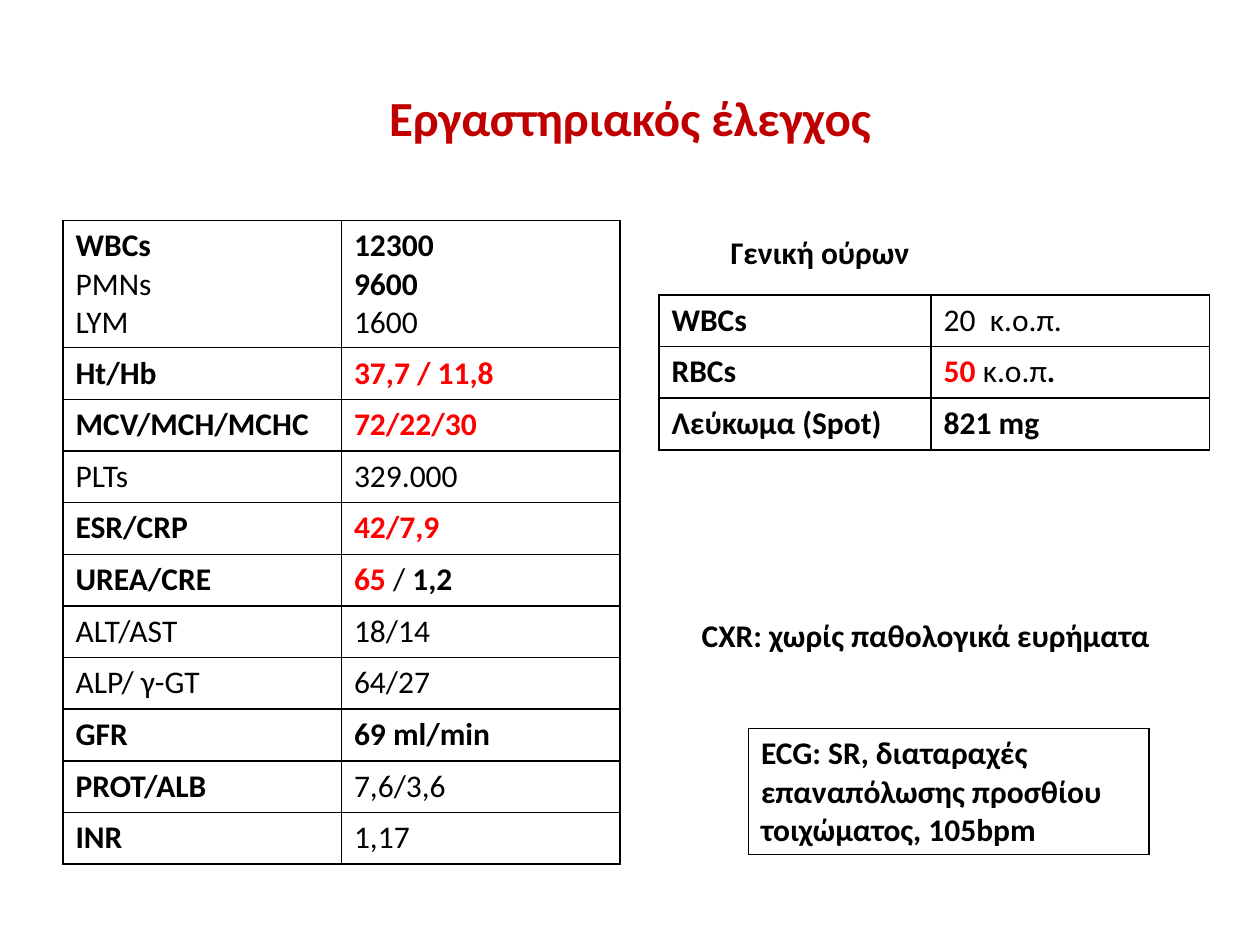
from lxml import etree
from pptx import Presentation
from pptx.dml.color import RGBColor
from pptx.enum.text import MSO_ANCHOR, PP_ALIGN
from pptx.oxml.ns import qn
from pptx.util import Inches, Pt

LEFT, CENTER = PP_ALIGN.LEFT, PP_ALIGN.CENTER
TOP, MIDDLE = MSO_ANCHOR.TOP, MSO_ANCHOR.MIDDLE
FONT = "Calibri"
BLACK, RED, DARK_RED = "000000", "FF0000", "C00000"
ROW, TALL = 0.41, 1.01

# In cell text, "|" parts runs, "*" starts a bold run, "!" a bold red one
BLOOD = [
    ("*WBCs\nPMNs\nLYM", "*12300\n*9600\n1600"),
    ("*Ht/Hb", "!37,7 / 11,8"),
    ("*MCV/MCH/MCHC", "!72/22/30"),
    ("PLTs", "329.000"),
    ("*ESR/CRP", "!42/7,9"),
    ("*UREA/CRE", "!65 |/ |*1,2"),
    ("ALT/AST", "18/14"),
    ("ALP/ γ-GT", "64/27"),
    ("*GFR", "*69 ml/min"),
    ("*PROT/ALB", "7,6/3,6"),
    ("*INR", "1,17"),
]
URINE = [
    ("*WBCs", "20  κ.ο.π."),
    ("*RBCs", "!50 |κ.ο.π|*."),
    ("*Λεύκωμα (Spot)", "*821 mg"),
]
ECG = [("*ECG: SR, διαταραχές επαναπόλωσης προσθίου τοιχώματος, 105bpm",)]


def paint(code):
    return RGBColor.from_string(code)


def write(frame, text, size=18, color=BLACK, align=LEFT):
    for i, line in enumerate(text.split("\n")):
        para = frame.paragraphs[0] if i == 0 else frame.add_paragraph()
        para.alignment = align
        for part in line.split("|"):
            run = para.add_run()
            run.text = part.lstrip("*!")
            font = run.font
            font.name, font.size = FONT, Pt(size)
            font.bold = part[0] in "*!"
            font.color.rgb = paint(RED if part[0] == "!" else color)


def add_text(slide, box, text, wrap=True, anchor=TOP, **style):
    frame = slide.shapes.add_textbox(*map(Inches, box)).text_frame
    frame.word_wrap = wrap
    frame.vertical_anchor = anchor
    write(frame, text, **style)


def frame_cell(cell):
    props = cell._tc.get_or_add_tcPr()
    for i, side in enumerate(("a:lnL", "a:lnR", "a:lnT", "a:lnB")):
        line = etree.Element(qn(side), w=str(Pt(1)))
        fill = etree.SubElement(line, qn("a:solidFill"))
        etree.SubElement(fill, qn("a:srgbClr"), val=BLACK)
        props.insert(i, line)


def add_grid(slide, left, top, cols, heights, rows):
    box = map(Inches, (left, top, sum(cols), sum(heights)))
    table = slide.shapes.add_table(len(rows), len(cols), *box).table
    table.first_row = table.horz_banding = False
    for col, width in zip(table.columns, cols):
        col.width = Inches(width)
    for row, height, texts in zip(table.rows, heights, rows):
        row.height = Inches(height)
        for cell, text in zip(row.cells, texts):
            cell.fill.background()
            frame_cell(cell)
            write(cell.text_frame, text)


def main():
    deck = Presentation()
    deck.slide_width, deck.slide_height = Inches(10), Inches(7.5)
    slide = deck.slides.add_slide(deck.slide_layouts[6])

    # Title
    add_text(slide, (0.5, 0.3, 9, 1.25), "*Εργαστηριακός έλεγχος",
             anchor=MIDDLE, size=28, color=DARK_RED, align=CENTER)

    # Blood tests
    add_grid(slide, 0.5, 1.75, [2.21, 2.21], [TALL] + [ROW] * 10, BLOOD)

    # Urine tests
    add_text(slide, (5.7, 1.8, 2.58, 0.4), "*Γενική ούρων")
    add_grid(slide, 5.23, 2.34, [2.16, 2.21], [ROW] * 3, URINE)

    # Chest film and ECG
    add_text(slide, (5.47, 4.84, 3.79, 0.4),
             "*CXR: χωρίς παθολογικά ευρήματα", wrap=False)
    add_grid(slide, 5.94, 5.78, [3.18], [1], ECG)

    deck.save("out.pptx")


if __name__ == "__main__":
    main()
